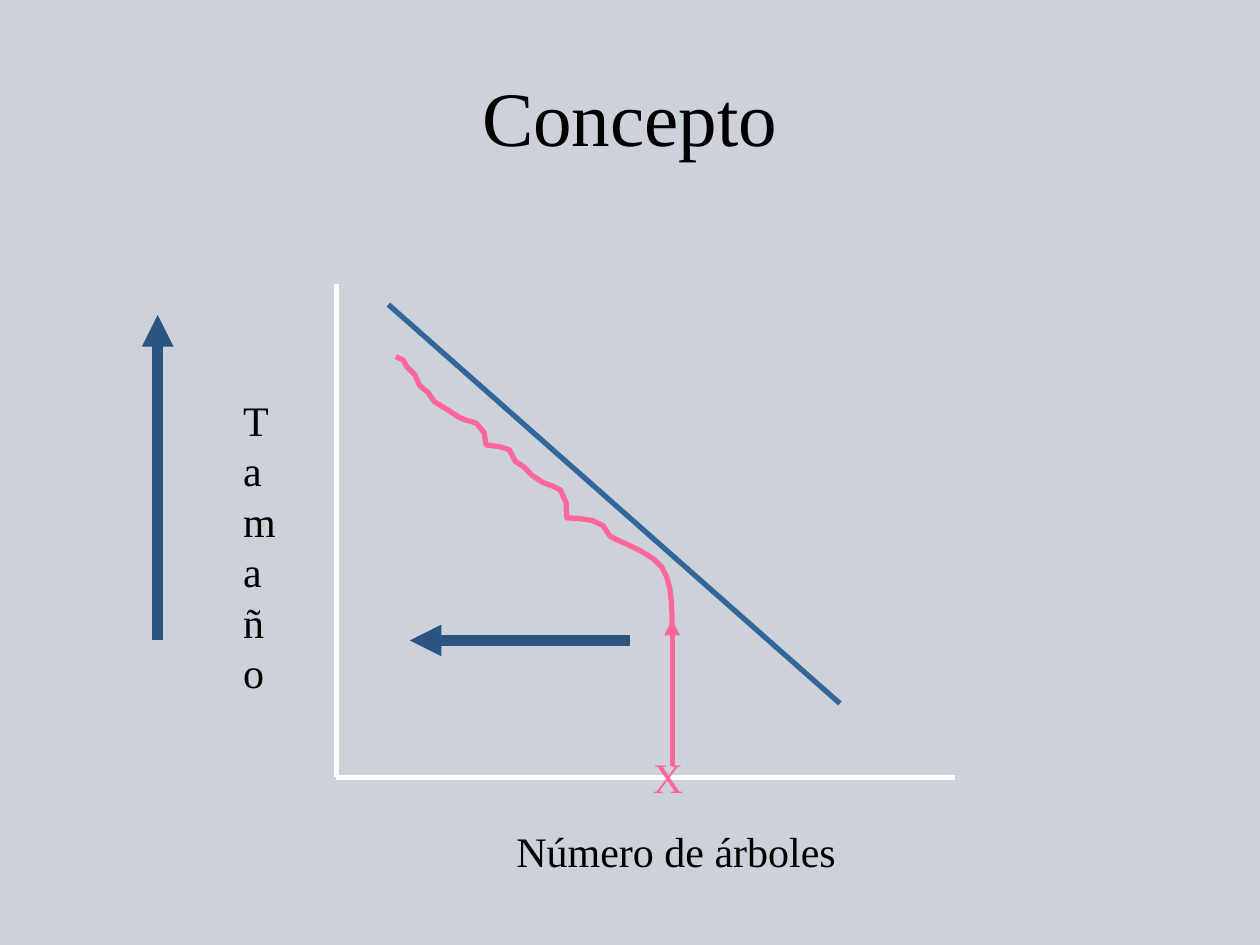
from math import ceil, dist
from pptx import Presentation
from pptx.dml.color import RGBColor
from pptx.enum.shapes import MSO_CONNECTOR
from pptx.enum.text import MSO_ANCHOR, PP_ALIGN
from pptx.oxml.ns import qn
from pptx.util import Cm, Pt
from lxml.etree import SubElement

HUES = {
    "back": "CDD1DA",
    "text": "000000",
    "axis": "FFFFFF",
    "limit": "336699",
    "path": "FF6699",
    "arrow": "2B5481",
}

# Growth curves: a start point, then Bezier pieces (two controls, one end)
BEND = [(13.55, 12.7),
        (13.55, 12.22), (13.55, 11.73), (13.34, 11.43),
        (13.13, 11.13), (12.42, 10.9), (12.28, 10.8)]
WAVE = [(12.29, 10.8),
        (12.19, 10.44), (11.73, 10.46), (11.43, 10.44),
        (11.4, 10.24), (11.46, 10.03), (11.3, 9.88),
        (11.15, 9.73), (11.18, 9.88), (10.95, 9.73),
        (10.87, 9.68), (10.72, 9.58), (10.72, 9.58),
        (10.62, 9.42), (10.52, 9.4), (10.39, 9.3),
        (10.31, 8.94), (10.11, 9.04), (9.8, 8.97),
        (9.78, 8.81), (9.78, 8.61), (9.6, 8.53),
        (9.53, 8.48), (9.45, 8.48), (9.37, 8.46),
        (9.32, 8.43), (9.25, 8.41), (9.25, 8.41),
        (8.99, 8.15), (9.27, 8.41), (9.02, 8.26),
        (8.92, 8.2), (8.76, 8.1), (8.76, 8.1),
        (8.69, 7.95), (8.59, 7.87), (8.46, 7.77),
        (8.33, 7.59), (8.41, 7.49), (8.2, 7.39),
        (8.18, 7.34), (8.18, 7.29), (8.13, 7.26),
        (8.1, 7.24), (8.05, 7.24), (8.03, 7.21),
        (8, 7.21), (8, 7.19), (7.98, 7.19)]


def trace(knots, step=0.3):
    """Points along a chain of Bezier pieces, about one per step."""
    dots = [knots[0]]
    for i in range(0, len(knots) - 1, 3):
        piece = knots[i:i + 4]
        count = ceil(dist(piece[0], piece[3]) / step)
        for n in range(1, count + 1):
            t = n / count
            parts = ((1 - t) ** 3, 3 * t * (1 - t) ** 2,
                     3 * t ** 2 * (1 - t), t ** 3)
            dots.append(tuple(sum(w * k[axis] for w, k in zip(parts, piece))
                              for axis in (0, 1)))
    return [(Cm(x), Cm(y)) for x, y in dots]


class Deck:
    font = "Times New Roman"

    def __init__(self, wide, high):
        self.file = Presentation()
        self.file.slide_width, self.file.slide_height = Cm(wide), Cm(high)
        self.slide = self.file.slides.add_slide(self.file.slide_layouts[6])
        fill = self.slide.background.fill
        fill.solid()
        fill.fore_color.rgb = self.hue("back")

    def hue(self, name):
        return RGBColor.from_string(HUES[name])

    def text(self, words, box, size=24, hue="text", align=PP_ALIGN.LEFT,
             anchor=MSO_ANCHOR.TOP):
        frame = self.slide.shapes.add_textbox(*map(Cm, box)).text_frame
        frame.word_wrap = True
        frame.vertical_anchor = anchor
        par = frame.paragraphs[0]
        par.text = words
        par.alignment = align
        par.font.name, par.font.size = self.font, Pt(size)
        par.font.color.rgb = self.hue(hue)

    def line(self, start, end, hue, width=3, head=False):
        link = self.slide.shapes.add_connector(
            MSO_CONNECTOR.STRAIGHT, *map(Cm, start + end))
        link.line.color.rgb = self.hue(hue)
        link.line.width = Pt(width)
        if head:
            SubElement(link.line._get_or_add_ln(), qn("a:tailEnd"),
                       type="triangle")
        SubElement(link._element.spPr, qn("a:effectLst"))

    def curve(self, knots, hue, width=3):
        first, *rest = trace(knots)
        form = self.slide.shapes.build_freeform(*first)
        form.add_line_segments(rest, close=False)
        shape = form.convert_to_shape()
        shape.shadow.inherit = False
        shape.fill.background()
        shape.line.color.rgb = self.hue(hue)
        shape.line.width = Pt(width)

    def save(self):
        self.file.save("out.pptx")


def main():
    deck = Deck(25.4, 19.05)
    deck.text("Concepto", (1.9, 1.06, 21.59, 2.54), 44,
              align=PP_ALIGN.CENTER, anchor=MSO_ANCHOR.MIDDLE)

    # Axes and their labels
    origin = (6.78, 15.67)
    deck.line((6.78, 5.72), origin, "axis")
    deck.line(origin, (19.26, 15.67), "axis")
    deck.text("Tamaño", (4.65, 7.83, 0.85, 7.44))
    deck.text("Número de árboles", (10.16, 16.51, 8.1, 1.3))

    # Limit line
    deck.line((7.83, 6.14), (16.93, 14.18), "limit")

    # Path of a stand from its starting mark
    deck.text("X", (12.91, 15.03, 1.27, 1.27), hue="path")
    deck.line((13.55, 15.45), (13.55, 12.49), "path", head=True)
    for knots in (BEND, WAVE):
        deck.curve(knots, "path")

    # Direction arrows: size up, number down
    deck.line((3.18, 12.91), (3.18, 6.35), "arrow", 6, head=True)
    deck.line((12.7, 12.91), (8.26, 12.91), "arrow", 6, head=True)

    deck.save()


if __name__ == "__main__":
    main()
